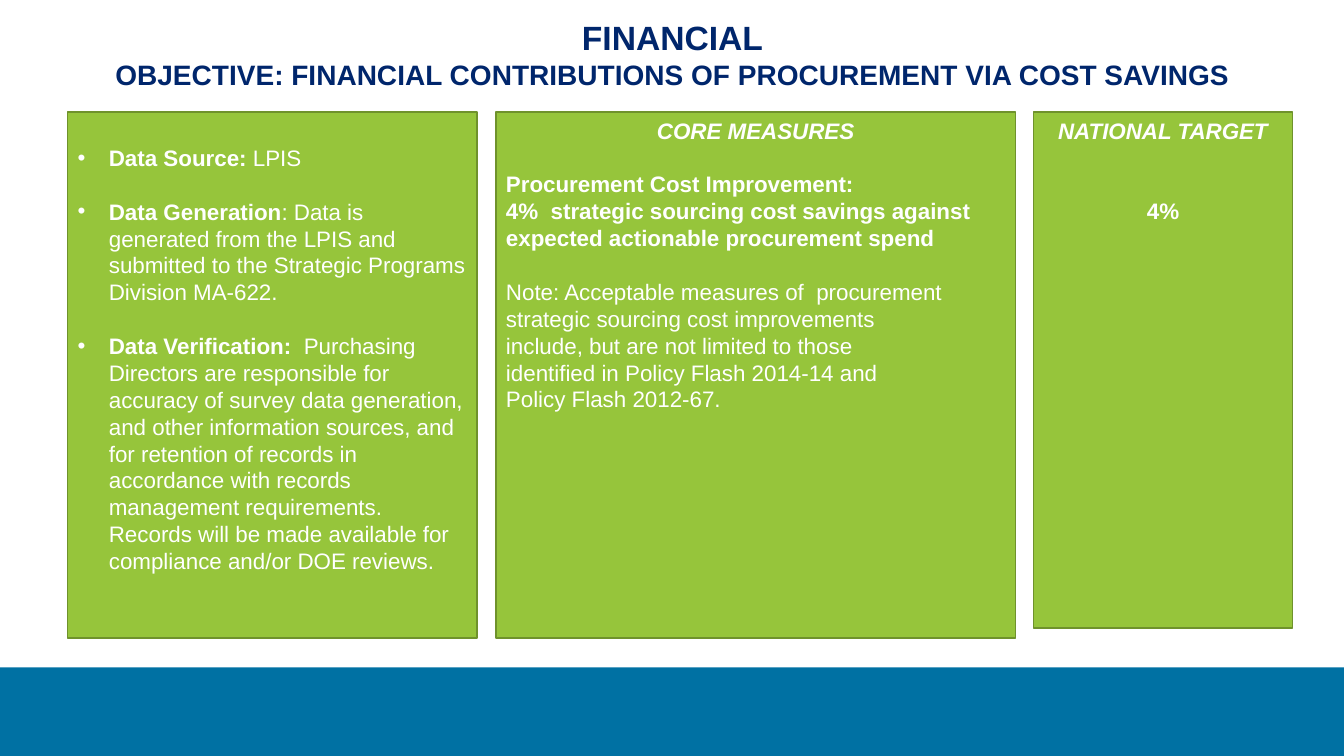
from lxml import etree
from pptx import Presentation
from pptx.dml.color import RGBColor
from pptx.enum import shapes, text
from pptx.oxml.ns import qn
from pptx.util import Inches, Pt

NAVY = RGBColor(0x00, 0x26, 0x6C)
BLUE = RGBColor(0x00, 0x71, 0xA3)
GREEN = RGBColor(0x96, 0xC5, 0x3B)
DARK_GREEN = RGBColor(0x6F, 0x92, 0x2C)
WHITE = RGBColor(0xFF, 0xFF, 0xFF)
LEFT, CENTER = text.PP_ALIGN.LEFT, text.PP_ALIGN.CENTER
FONT = "Arial"
BODY_SIZE = 16
LEADING = 1.2
PANEL_TOP = 1.11

DATA_NOTES = [
    ("Data Source: ", "LPIS"),
    ("Data Generation", ": Data is generated from the LPIS and submitted to the "
     "Strategic Programs Division MA-622."),
    ("Data Verification:  ", "Purchasing Directors are responsible for accuracy of "
     "survey data generation, and other information sources, and for retention of "
     "records in accordance with records management requirements.  Records will be "
     "made available for compliance and/or DOE reviews."),
]
MEASURE = [
    "Procurement Cost Improvement:",
    "4%  strategic sourcing cost savings against",
    "expected actionable procurement spend",
]
NOTE = [
    "Note: Acceptable measures of  procurement",
    "strategic sourcing cost improvements",
    "include, but are not limited to those",
    "identified in Policy Flash 2014-14 and",
    "Policy Flash 2012-67.",
]


def place(box, left, top, width, height):
    box.left, box.top = Inches(left), Inches(top)
    box.width, box.height = Inches(width), Inches(height)


def prepare_frame(box, top_inset=0.05):
    frame = box.text_frame
    frame.word_wrap = True
    frame.auto_size = text.MSO_AUTO_SIZE.NONE
    frame.vertical_anchor = text.MSO_ANCHOR.TOP
    frame.margin_left = frame.margin_right = Inches(0.1)
    frame.margin_top, frame.margin_bottom = Inches(top_inset), Inches(0.05)


def add_para(box, content="", size=BODY_SIZE, color=WHITE, align=LEFT,
             bold=None, italic=False, gap=0, bullet=False):
    """Append a paragraph; gap is the space before it, in lines."""
    frame = box.text_frame
    first = frame.paragraphs[0]
    para = frame.add_paragraph() if first.runs else first
    para.alignment = align
    para.line_spacing = Pt(size * LEADING)
    para.space_before = Pt(gap * size * LEADING)
    para.space_after = Pt(0)
    if bullet:
        hang_bullet(para)
    if content:
        para.add_run().text = content
    font = para.font
    font.name, font.size, font.bold, font.italic = FONT, Pt(size), bold, italic
    font.color.rgb = color
    return para


def hang_bullet(para, indent=0.31):
    properties = para._p.get_or_add_pPr()
    properties.set("marL", str(Inches(indent)))
    properties.set("indent", str(-Inches(indent)))
    etree.SubElement(properties, qn("a:buFont")).set("typeface", FONT)
    etree.SubElement(properties, qn("a:buChar")).set("char", "•")


def paint(box, fill, line=None):
    box.fill.solid()
    box.fill.fore_color.rgb = fill
    if line is None:
        box.line.fill.background()
    else:
        box.line.color.rgb = line
        box.line.width = Pt(1)


def add_rectangle(page, left, top, width, height, fill, line=None):
    box = page.shapes.add_shape(shapes.MSO_SHAPE.RECTANGLE, Inches(left),
                                Inches(top), Inches(width), Inches(height))
    box.shadow.inherit = False
    paint(box, fill, line)
    prepare_frame(box)
    return box


def add_panel(page, left, width, height, heading):
    box = add_rectangle(page, left, PANEL_TOP, width, height, GREEN, DARK_GREEN)
    add_para(box, heading, align=CENTER, bold=True, italic=True)
    return box


def fill_title(title):
    place(title, 0.87, 0.12, 11.6, 0.84)
    prepare_frame(title)
    add_para(title, "FINANCIAL", 24, NAVY, CENTER, bold=True)
    add_para(title, "OBJECTIVE: FINANCIAL CONTRIBUTIONS OF PROCUREMENT VIA COST SAVINGS",
             20, NAVY, CENTER, bold=True)


def fill_data_notes(body):
    place(body, 0.67, PANEL_TOP, 4.06, 5.22)
    paint(body, GREEN, DARK_GREEN)
    prepare_frame(body, top_inset=0.32)
    for index, (label, detail) in enumerate(DATA_NOTES):
        para = add_para(body, gap=min(index, 1), bullet=True)
        for content, bold in ((label, True), (detail, False)):
            span = para.add_run()
            span.text, span.font.bold = content, bold


def main():
    deck = Presentation()
    deck.slide_width, deck.slide_height = Inches(13.33), Inches(7.5)
    page = deck.slides.add_slide(deck.slide_layouts[1])

    add_rectangle(page, 0, 6.62, 13.33, 0.88, BLUE)
    fill_title(page.shapes.title)
    fill_data_notes(page.placeholders[1])

    measures = add_panel(page, 4.92, 5.15, 5.22, "CORE MEASURES")
    for lines, bold in ((MEASURE, True), (NOTE, False)):
        for index, line in enumerate(lines):
            add_para(measures, line, bold=bold, gap=1 if index == 0 else 0)

    target = add_panel(page, 10.25, 2.57, 5.12, "NATIONAL TARGET")
    add_para(target, "4%", align=CENTER, bold=True, gap=2)

    deck.save("out.pptx")


if __name__ == "__main__":
    main()
